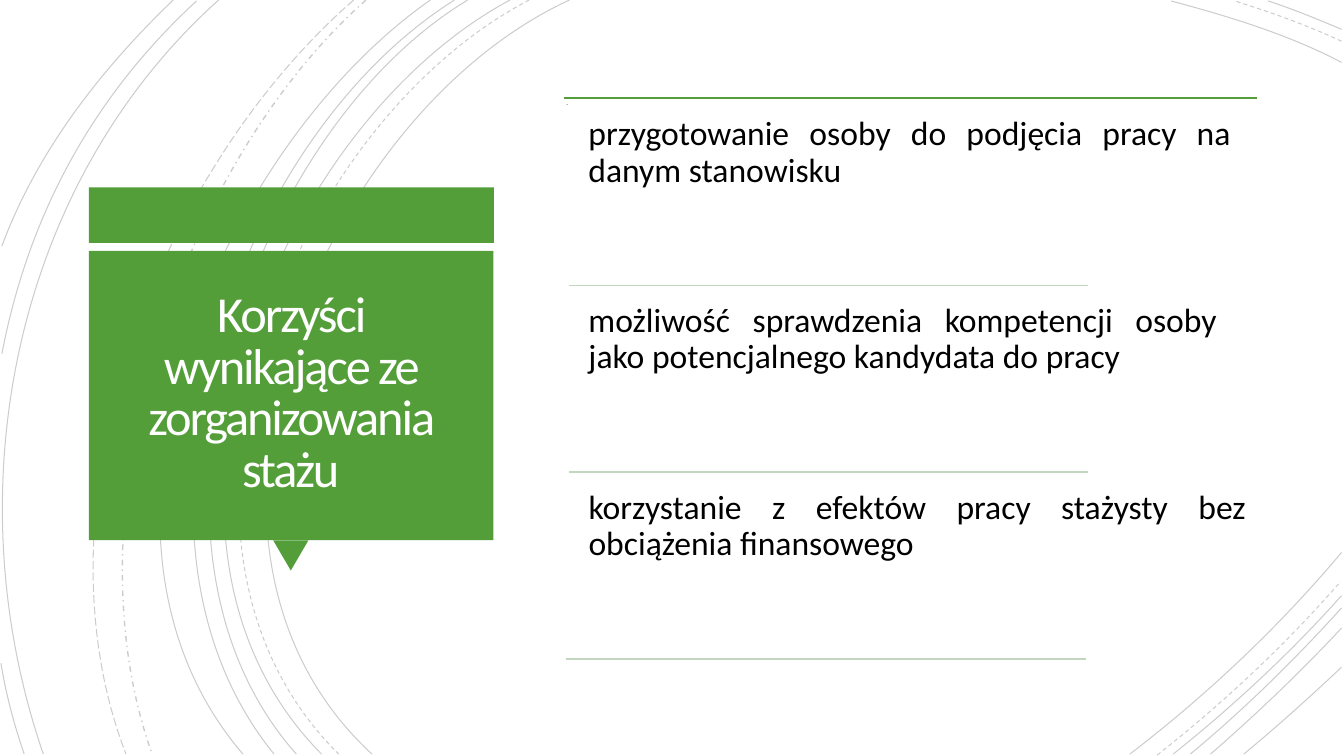
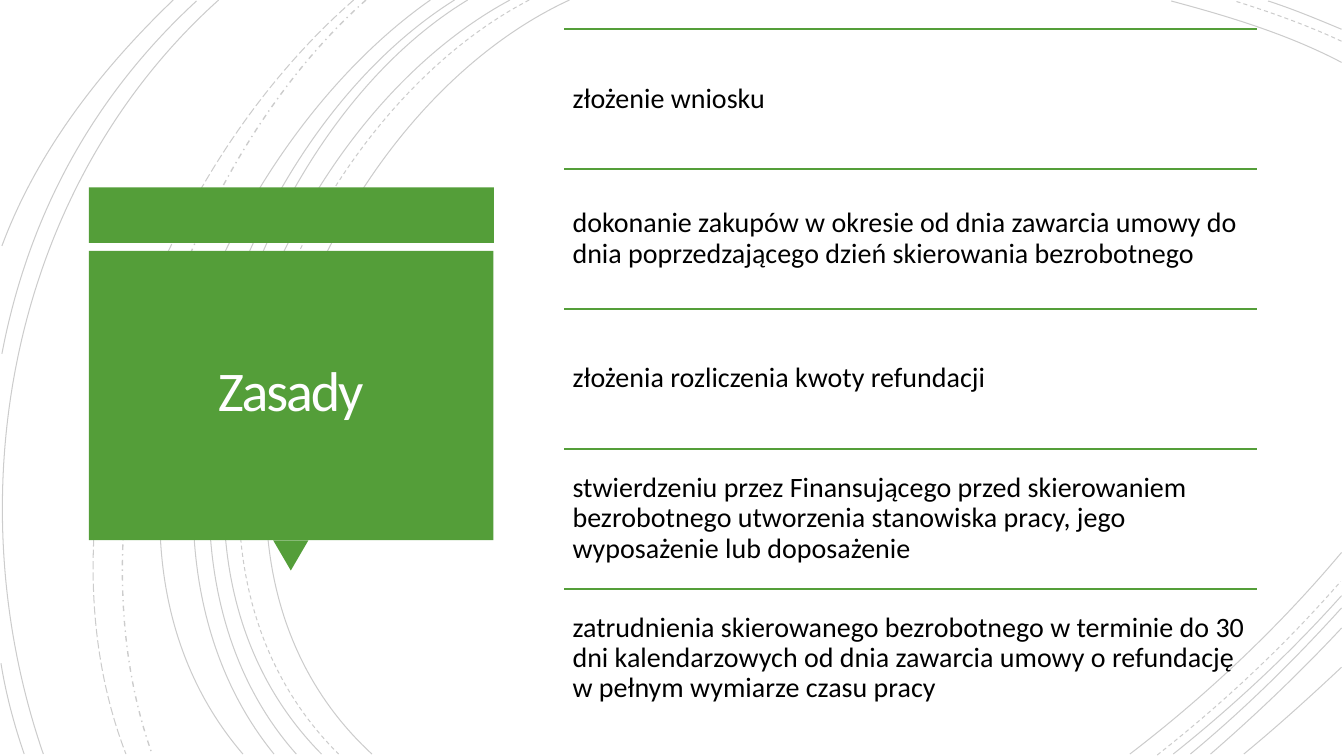
from pptx import Presentation
from pptx.dml.color import RGBColor
from pptx.enum.dml import MSO_LINE
from pptx.enum.shapes import MSO_CONNECTOR, MSO_SHAPE
from pptx.enum.text import MSO_ANCHOR, PP_ALIGN
from pptx.oxml.xmlchemy import OxmlElement
from pptx.util import Pt

SOLID, DASH = MSO_LINE.SOLID, MSO_LINE.DASH
DASH_DOT, LONG_DASH = MSO_LINE.DASH_DOT, MSO_LINE.LONG_DASH
RECTANGLE, TRIANGLE = MSO_SHAPE.RECTANGLE, MSO_SHAPE.ISOSCELES_TRIANGLE
STRAIGHT = MSO_CONNECTOR.STRAIGHT
TOP, MIDDLE = MSO_ANCHOR.TOP, MSO_ANCHOR.MIDDLE
LEFT, CENTER, JUSTIFY = PP_ALIGN.LEFT, PP_ALIGN.CENTER, PP_ALIGN.JUSTIFY

COLORS = {
    "green": "549E39",
    "pale": "C3D6BF",
    "arc": "000000",
    "text": "000000",
    "title": "FFFEFF",
}
BODY_FONT, DOT_FONT = "Calibri", "Roboto Slab"
ARC_OPACITY = 20
LIST_LEFT, LIST_WIDTH = 403.2, 494.6
BENEFIT_LEFT, BENEFIT_TOP, BENEFIT_HEIGHT, BENEFIT_PITCH = 413.3, 76.3, 126.7, 133.3
DIVIDER_GAP, DIVIDER_LENGTH = 127.6, 370.8
RULE_TOP, RULE_PITCH = 20.9, 99.9

ARCS = [
    (SOLID, 0.75, (406.8, 0), (226.8, 82.8), (103, 388.8), (265.7, 538.6)),
    (SOLID, 0.75, (958.3, 44.6), (920.2, 24.5), (877, 11.5), (836.6, 0.7)),
    (SOLID, 0.75, (807.1, 538.6), (861.8, 496.8), (913.7, 447.8), (958.3, 394.6)),
    (DASH, 0.75, (378, 0), (205.2, 90), (88.6, 386.6), (241.9, 538.6)),
    (DASH, 0.75, (958.3, 29.5), (933.8, 18), (907.2, 8.6), (882, 0.7)),
    (DASH, 0.75, (826.6, 539.3), (873.4, 502.6), (918, 460.8), (957.6, 415.4)),
    (SOLID, 0.75, (364.3, 0), (194.4, 91.4), (79.2, 386.6), (229.7, 538.6)),
    (SOLID, 0.75, (958.3, 20.9), (941, 13.7), (923.8, 6.5), (905.8, 0.7)),
    (SOLID, 0.75, (838.1, 538.6), (880.6, 504.7), (921.6, 466.6), (958.3, 425.5)),
    (SOLID, 0.75, (334.1, 0), (175.7, 95.8), (79.2, 389.5), (211.7, 538.6)),
    (SOLID, 0.75, (850.3, 538.6), (888.5, 506.9), (924.5, 471.6), (958.3, 434.2)),
    (SOLID, 0.75, (324.7, 0), (166.3, 99.4), (69.8, 383.8), (195.8, 538.6)),
    (SOLID, 0.75, (864.7, 538.6), (897.1, 510.5), (928.8, 480.2), (958.3, 448.6)),
    (SOLID, 0.75, (307.4, 0), (156.2, 105.8), (38.2, 380.9), (173.5, 538.6)),
    (SOLID, 0.75, (888.5, 538.6), (912.2, 519.1), (935.3, 498.2), (958.3, 476.6)),
    (DASH_DOT, 1, (261.4, 0), (126.7, 119.5), (46.8, 366.5), (108.7, 538.6)),
    (LONG_DASH, 0.75, (252.7, 0), (113, 121.7), (20.9, 359.3), (90, 538.6)),
    (SOLID, 0.75, (156.2, 0), (7.9, 133.2), (-33.1, 352.8), (31, 538.6)),
    (SOLID, 0.75, (140.4, 0.7), (66.2, 69.1), (20.2, 154.1), (1.4, 252.7)),
    (SOLID, 0.75, (0.7, 473.8), (4.3, 496.1), (10.1, 517.7), (17.3, 538.6)),
    (SOLID, 0.75, (123.8, 0), (72, 49.7), (26.6, 108), (1.4, 175.7)),
]

PANEL_PARTS = [
    (RECTANGLE, 63.4, 133.9, 289.4, 39.6, 0),
    (TRIANGLE, 195.1, 385.9, 25.2, 21.6, 180),
    (RECTANGLE, 63.4, 179.3, 289, 206.6, 0),
]

BENEFITS = [
    ("przygotowanie osoby do podjęcia pracy na danym stanowisku", 473, 406.1),
    ("możliwość sprawdzenia kompetencji osoby jako potencjalnego kandydata do pracy", 463, 406.1),
    ("korzystanie z efektów pracy stażysty bez obciążenia finansowego", 483.8, 404.6),
]

RULES = [
    "złożenie wniosku",
    "dokonanie zakupów w okresie od dnia zawarcia umowy do dnia poprzedzającego "
    "dzień skierowania bezrobotnego",
    "złożenia rozliczenia kwoty refundacji",
    "stwierdzeniu przez Finansującego przed skierowaniem bezrobotnego utworzenia "
    "stanowiska pracy, jego wyposażenie lub doposażenie",
    "zatrudnienia skierowanego bezrobotnego w terminie do 30 dni kalendarzowych "
    "od dnia zawarcia umowy o refundację w pełnym wymiarze czasu pracy",
]


def color(name):
    return RGBColor.from_string(COLORS[name])


def apply_format(target, values):
    for attribute, value in values.items():
        setattr(target, attribute, value)


def add_arc(slide, dash, weight, *points):
    start, *others = [(Pt(x), Pt(y)) for x, y in points]
    builder = slide.shapes.build_freeform(*start)
    builder.add_line_segments(others, close=False)
    arc = builder.convert_to_shape()
    arc.shadow.inherit = False
    arc.fill.background()
    apply_format(arc.line, {"width": Pt(weight), "dash_style": dash})
    arc.line.color.rgb = color("arc")
    alpha = OxmlElement("a:alpha")
    alpha.set("val", str(ARC_OPACITY * 1000))
    arc._element.xpath(".//a:ln//a:srgbClr")[0].append(alpha)
    segments = arc._element.xpath(".//a:lnTo")
    curve = OxmlElement("a:cubicBezTo")
    segments[0].addprevious(curve)
    for segment in segments:
        curve.append(segment[0])
        segment.getparent().remove(segment)


def add_panel_part(slide, kind, left, top, width, height, rotation):
    part = slide.shapes.add_shape(kind, Pt(left), Pt(top), Pt(width), Pt(height))
    part.rotation = rotation
    part.shadow.inherit = False
    part.fill.solid()
    part.fill.fore_color.rgb = color("green")
    part.line.fill.background()


def add_divider(slide, left, top, length, color_name):
    divider = slide.shapes.add_connector(
        STRAIGHT, Pt(left), Pt(top), Pt(left + length), Pt(top))
    divider.line.width = Pt(1.25)
    divider.line.color.rgb = color(color_name)
    divider._element.spPr.append(OxmlElement("a:effectLst"))


def add_text(slide, text, left, top, width, height, size, inset, font=BODY_FONT,
             color_name="text", align=LEFT, anchor=TOP, line_spacing=0.9):
    box = slide.shapes.add_textbox(Pt(left), Pt(top), Pt(width), Pt(height))
    frame = box.text_frame
    apply_format(frame, {
        "word_wrap": True, "vertical_anchor": anchor,
        "margin_left": Pt(inset), "margin_right": Pt(inset),
        "margin_top": Pt(inset), "margin_bottom": Pt(inset),
    })
    paragraph = frame.paragraphs[0]
    apply_format(paragraph, {"alignment": align, "line_spacing": line_spacing})
    run = paragraph.add_run()
    run.text = text
    apply_format(run.font, {"name": font, "size": Pt(size)})
    run.font.color.rgb = color(color_name)
    return run


def add_titled_slide(deck, title, title_size):
    slide = deck.slides.add_slide(deck.slide_layouts[6])
    for arc in ARCS:
        add_arc(slide, *arc)
    for part in PANEL_PARTS:
        add_panel_part(slide, *part)
    heading = add_text(slide, title, 69.8, 185, 275.8, 193.7, title_size, 18,
                       color_name="title", align=CENTER, anchor=MIDDLE, line_spacing=0.85)
    heading.font._element.set("spc", "-150")
    return slide


def add_benefits(slide):
    add_divider(slide, LIST_LEFT, 69.8, LIST_WIDTH, "green")
    add_text(slide, ".", LIST_LEFT, 69.8, 3.6, 406, 5, 1.4, font=DOT_FONT)
    for row, (benefit, width, divider_left) in enumerate(BENEFITS):
        top = BENEFIT_TOP + row * BENEFIT_PITCH
        add_text(slide, benefit, BENEFIT_LEFT, top, width, BENEFIT_HEIGHT, 24, 7.2,
                 align=JUSTIFY)
        add_divider(slide, divider_left, top + DIVIDER_GAP, DIVIDER_LENGTH, "pale")


def add_rules(slide):
    for row, rule in enumerate(RULES):
        top = RULE_TOP + row * RULE_PITCH
        add_divider(slide, LIST_LEFT, top, LIST_WIDTH, "green")
        add_text(slide, rule, LIST_LEFT, top, LIST_WIDTH, RULE_PITCH, 20, 5.8,
                 anchor=MIDDLE)


def main():
    deck = Presentation()
    apply_format(deck, {"slide_width": Pt(960), "slide_height": Pt(540)})
    add_benefits(add_titled_slide(deck, "Korzyści wynikające ze zorganizowania stażu", 36))
    add_rules(add_titled_slide(deck, "Zasady", 40))
    deck.save("out.pptx")


if __name__ == "__main__":
    main()
